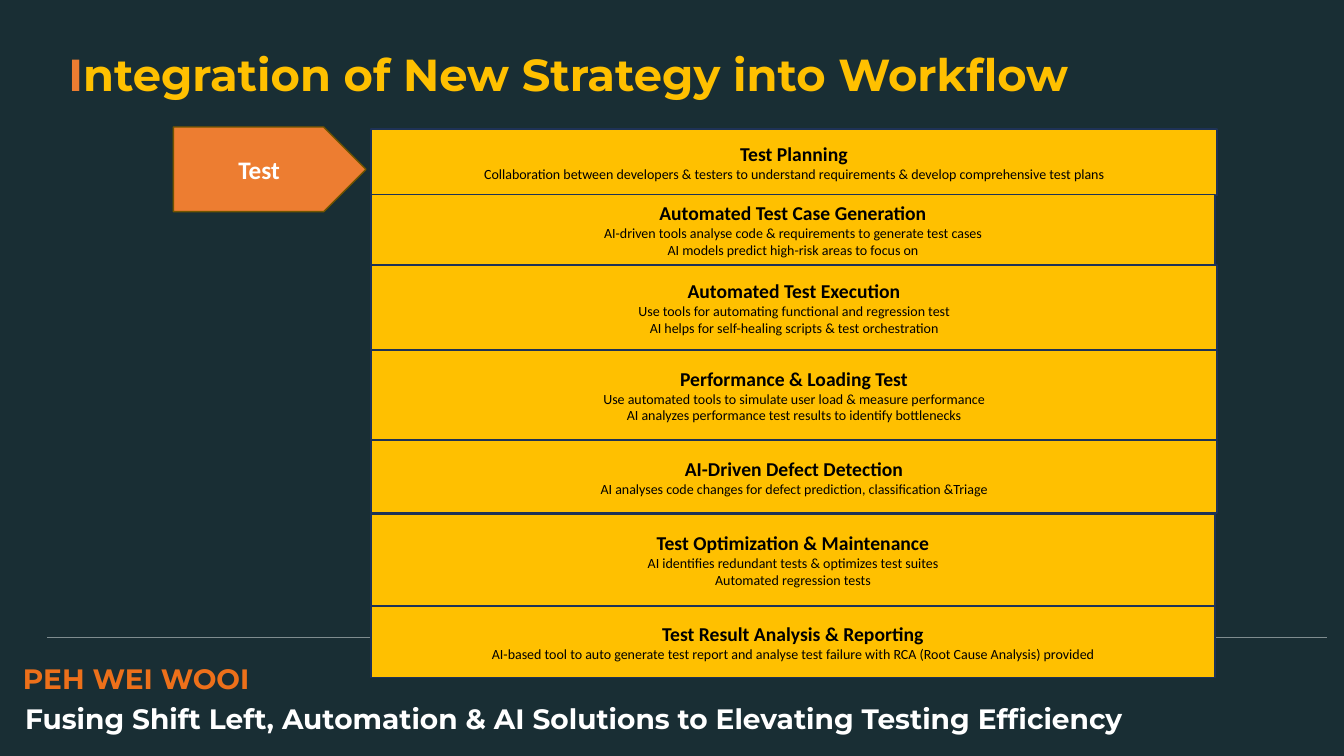
from lxml import etree
from pptx import Presentation
from pptx.dml.color import RGBColor
from pptx.enum.shapes import MSO_CONNECTOR, MSO_SHAPE
from pptx.enum.text import MSO_ANCHOR, PP_ALIGN
from pptx.oxml.ns import qn
from pptx.util import Inches, Pt

RECT, ARROW = MSO_SHAPE.RECTANGLE, MSO_SHAPE.PENTAGON
LINE = MSO_CONNECTOR.STRAIGHT
MID, TOP = MSO_ANCHOR.MIDDLE, MSO_ANCHOR.TOP
CENTER, LEFT = PP_ALIGN.CENTER, PP_ALIGN.LEFT

COLORS = {
    "back": "192E34", "gold": "FFC000", "orange": "ED7D31",
    "name": "ED701A", "navy": "1E3256", "brown": "705400",
    "rule": "7F8C8F", "white": "FFFFFF", "black": "000000",
}


def rgb(name):
    return RGBColor.from_string(COLORS[name])


def write(shape, paras, font="Calibri", align=LEFT, anchor=TOP, space=None):
    frame = shape.text_frame
    frame.word_wrap = True
    frame.vertical_anchor = anchor
    for i, runs in enumerate(paras):
        para = frame.add_paragraph() if i else frame.paragraphs[0]
        para.alignment = align
        if space:
            para.line_spacing = space
        for text, size, color, bold in runs:
            run = para.add_run()
            run.text = text
            run.font.name = font
            run.font.size = Pt(size)
            run.font.bold = bold
            run.font.color.rgb = rgb(color)


prs = Presentation()
prs.slide_width, prs.slide_height = Inches(13.33), Inches(7.5)
slide = prs.slides.add_slide(prs.slide_layouts[6])
slide.background.fill.solid()
slide.background.fill.fore_color.rgb = rgb("back")
shapes = slide.shapes

rule = shapes.add_connector(LINE, Inches(0.47), Inches(6.32), Inches(13.16), Inches(6.32))
rule.line.color.rgb = rgb("rule")
rule.line.width = Pt(0.5)
etree.SubElement(rule._element.spPr, qn("a:effectLst"))

TITLE = [("I", 32, "orange", True),
         ("ntegration of New Strategy into Workflow", 32, "gold", True)]
NAME = [("PEH WEI WOOI", 20, "name", True)]
TOPIC = [("Fusing Shift Left, Automation & AI Solutions to Elevating Testing Efficiency",
          20, "white", True)]
for x, y, w, h, runs, space in [
    (0.13, 6.55, 4.76, 0.35, NAME, 0.9),
    (0.15, 6.95, 11.34, 0.24, TOPIC, 0.9),
    (0.58, 0.41, 10.76, 0.64, TITLE, None),
]:
    box = shapes.add_textbox(Inches(x), Inches(y), Inches(w), Inches(h))
    write(box, [runs], font="Montserrat", space=space)

WIDE, SLIM = 8.39, 8.37
STEPS = [
    (1.28, WIDE, 0.66, "Test Planning", [
        "Collaboration between developers & testers to understand requirements"
        " & develop comprehensive test plans"]),
    (1.93, SLIM, 0.7, "Automated Test Case Generation", [
        "AI-driven tools analyse code & requirements to generate test cases",
        "AI models predict high-risk areas to focus on"]),
    (2.63, WIDE, 0.84, "Automated Test Execution", [
        "Use tools for automating functional and regression test",
        "AI helps for self-healing scripts & test orchestration"]),
    (3.48, WIDE, 0.88, "Performance & Loading Test", [
        "Use automated tools to simulate user load & measure performance",
        "AI analyzes performance test results to identify bottlenecks"]),
    (4.37, WIDE, 0.72, "AI-Driven Defect Detection", [
        "AI analyses code changes for defect prediction, classification &Triage"]),
    (5.1, SLIM, 0.91, "Test Optimization & Maintenance", [
        "AI identifies redundant tests & optimizes test suites",
        "Automated regression tests"]),
    (6.02, SLIM, 0.7, "Test Result Analysis & Reporting", [
        "AI-based tool to auto generate test report and analyse test failure"
        " with RCA (Root Cause Analysis) provided"]),
]
blocks = [(ARROW, 1.72, 1.26, 1.91, 0.84, "orange", "brown", [[("Test", 18, "white", True)]])]
for y, w, h, head, notes in STEPS:
    paras = [[(head, 14, "black", True)]]
    paras += [[(note, 10, "black", False)] for note in notes]
    blocks.append((RECT, 3.68, y, w, h, "gold", "navy", paras))

for kind, x, y, w, h, fill, edge, paras in blocks:
    block = shapes.add_shape(kind, Inches(x), Inches(y), Inches(w), Inches(h))
    block.shadow.inherit = False
    block.fill.solid()
    block.fill.fore_color.rgb = rgb(fill)
    block.line.color.rgb = rgb(edge)
    block.line.width = Pt(1)
    write(block, paras, align=CENTER, anchor=MID)

prs.save("out.pptx")
